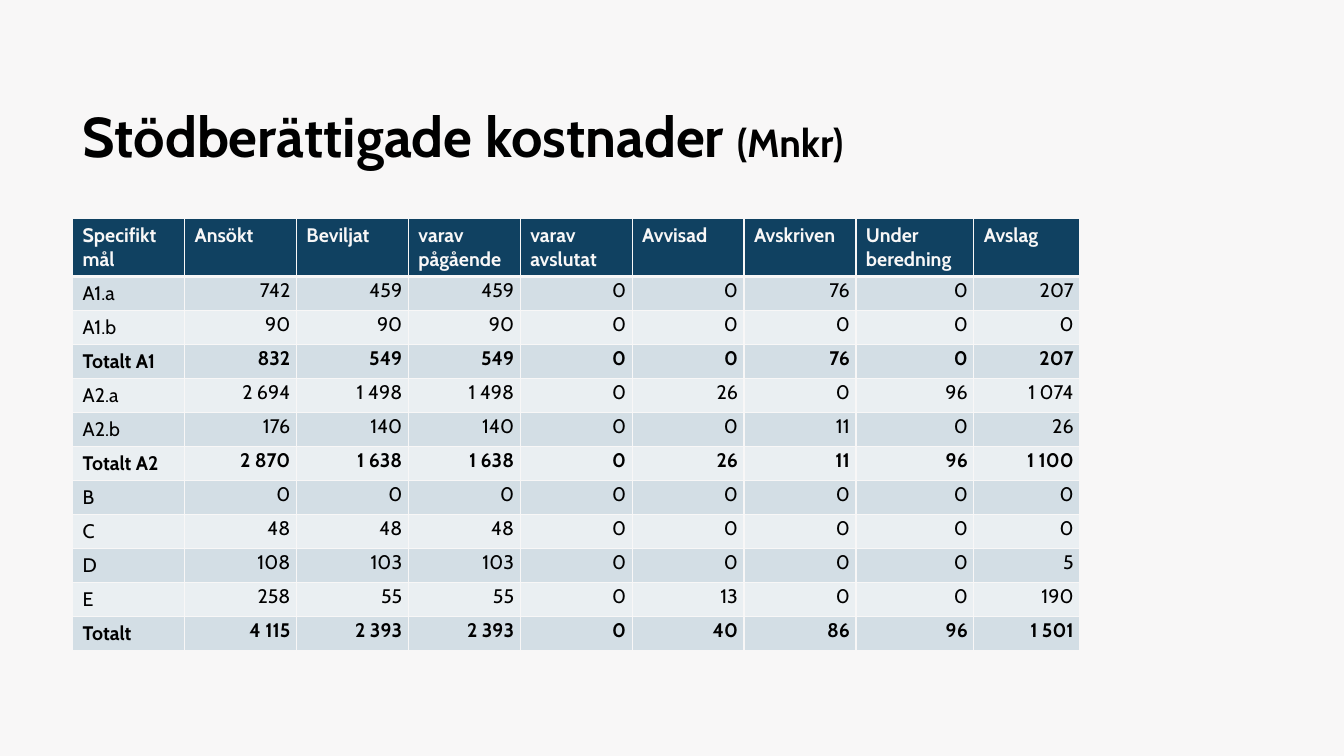
from lxml import etree
from pptx import Presentation
from pptx.dml.color import RGBColor
from pptx.enum.text import MSO_ANCHOR, MSO_AUTO_SIZE, PP_ALIGN
from pptx.oxml.ns import qn
from pptx.util import Inches, Pt

LEFT, RIGHT = PP_ALIGN.LEFT, PP_ALIGN.RIGHT
TOP, MIDDLE = MSO_ANCHOR.TOP, MSO_ANCHOR.MIDDLE
NO_AUTOFIT = MSO_AUTO_SIZE.NONE

COLORS = {
    "background": "F8F7F7",
    "header": "104161",
    "dark_band": "D3DEE5",
    "light_band": "EAEFF2",
    "text": "000000",
}
COLUMN_WIDTHS = [1.11] * 7 + [1.17, 1.05]
HEADER_HEIGHT, ROW_HEIGHT = 0.41, 0.24
HEADERS = ["Specifikt mål", "Ansökt", "Beviljat", "varav pågående", "varav avslutat",
           "Avvisad", "Avskriven", "Under beredning", "Avslag"]
COSTS = [
    ["A1.a", "742", "459", "459", "0", "0", "76", "0", "207"],
    ["A1.b", "90", "90", "90", "0", "0", "0", "0", "0"],
    ["Totalt A1", "832", "549", "549", "0", "0", "76", "0", "207"],
    ["A2.a", "2 694", "1 498", "1 498", "0", "26", "0", "96", "1 074"],
    ["A2.b", "176", "140", "140", "0", "0", "11", "0", "26"],
    ["Totalt A2", "2 870", "1 638", "1 638", "0", "26", "11", "96", "1 100"],
    ["B", "0", "0", "0", "0", "0", "0", "0", "0"],
    ["C", "48", "48", "48", "0", "0", "0", "0", "0"],
    ["D", "108", "103", "103", "0", "0", "0", "0", "5"],
    ["E", "258", "55", "55", "0", "13", "0", "0", "190"],
    ["Totalt", "4 115", "2 393", "2 393", "0", "40", "86", "96", "1 501"],
]


class CostSlide:
    """Holds the style and the current slide, and adds its elements."""

    def __init__(self, presentation, font="Cabin"):
        self.font = font
        self.slide = presentation.slides.add_slide(presentation.slide_layouts[5])
        background = self.slide.background.fill
        background.solid()
        background.fore_color.rgb = RGBColor.from_string(COLORS["background"])

    def add_text(self, paragraph, text, size=14, color="text", bold=False):
        run = paragraph.add_run()
        run.text = text
        run.font.name = self.font
        run.font.size = Pt(size)
        run.font.bold = bold
        run.font.color.rgb = RGBColor.from_string(COLORS[color])

    def add_title(self, parts, left, top, width, height):
        shape = self.slide.shapes.title
        shape.left, shape.top = Inches(left), Inches(top)
        shape.width, shape.height = Inches(width), Inches(height)
        frame = shape.text_frame
        frame.word_wrap = True
        frame.auto_size = NO_AUTOFIT
        frame.vertical_anchor = MIDDLE
        paragraph = frame.paragraphs[0]
        paragraph.alignment = LEFT
        for text, size in parts:
            self.add_text(paragraph, text, size=size, bold=True)

    def set_borders(self, cell, **widths):
        properties = cell._tc.get_or_add_tcPr()
        for side in "LRTB":
            line = etree.SubElement(properties, qn(f"a:ln{side}"), w=str(Pt(widths.get(side, 1))))
            fill = etree.SubElement(line, qn("a:solidFill"))
            etree.SubElement(fill, qn("a:srgbClr"), val=COLORS["background"])

    def fill_cell(self, cell, text, fill, number=False, borders=None, **text_format):
        self.set_borders(cell, **(borders or {}))
        cell.fill.solid()
        cell.fill.fore_color.rgb = RGBColor.from_string(COLORS[fill])
        cell.vertical_anchor = MIDDLE if number else TOP
        paragraph = cell.text_frame.paragraphs[0]
        paragraph.alignment = RIGHT if number else LEFT
        if number:
            cell.margin_left = cell.margin_right = Inches(0.06)
            cell.margin_top = cell.margin_bottom = 0
            paragraph.line_spacing = Pt(13)
            paragraph.space_after = Pt(2)
        self.add_text(paragraph, text, **text_format)

    def add_table(self, headers, rows, left, top, height):
        shape = self.slide.shapes.add_table(
            len(rows) + 1, len(headers), Inches(left), Inches(top),
            Inches(sum(COLUMN_WIDTHS)), Inches(height))
        table = shape.table
        for column, width in zip(table.columns, COLUMN_WIDTHS):
            column.width = Inches(width)
        for index, row in enumerate(table.rows):
            row.height = Inches(ROW_HEIGHT if index else HEADER_HEIGHT)
        shape.height = Inches(height)
        for column, text in enumerate(headers):
            self.fill_cell(table.cell(0, column), text, "header", borders={"B": 3},
                           color="background", bold=True)
        for index, values in enumerate(rows, start=1):
            band = "dark_band" if index % 2 else "light_band"
            for column, text in enumerate(values):
                self.fill_cell(table.cell(index, column), text, band, number=column > 0,
                               borders={"T": 3} if index == 1 else None,
                               bold=values[0].startswith("Totalt"))


def main():
    presentation = Presentation()
    presentation.slide_width, presentation.slide_height = Inches(13.33), Inches(7.5)
    slide = CostSlide(presentation)
    slide.add_title([("Stödberättigade kostnader ", 40), ("(Mnkr)", 28)], 0.72, 0.62, 9.97, 1.45)
    slide.add_table(HEADERS, COSTS, 0.72, 2.17, 4.23)
    presentation.save("out.pptx")


if __name__ == "__main__":
    main()
